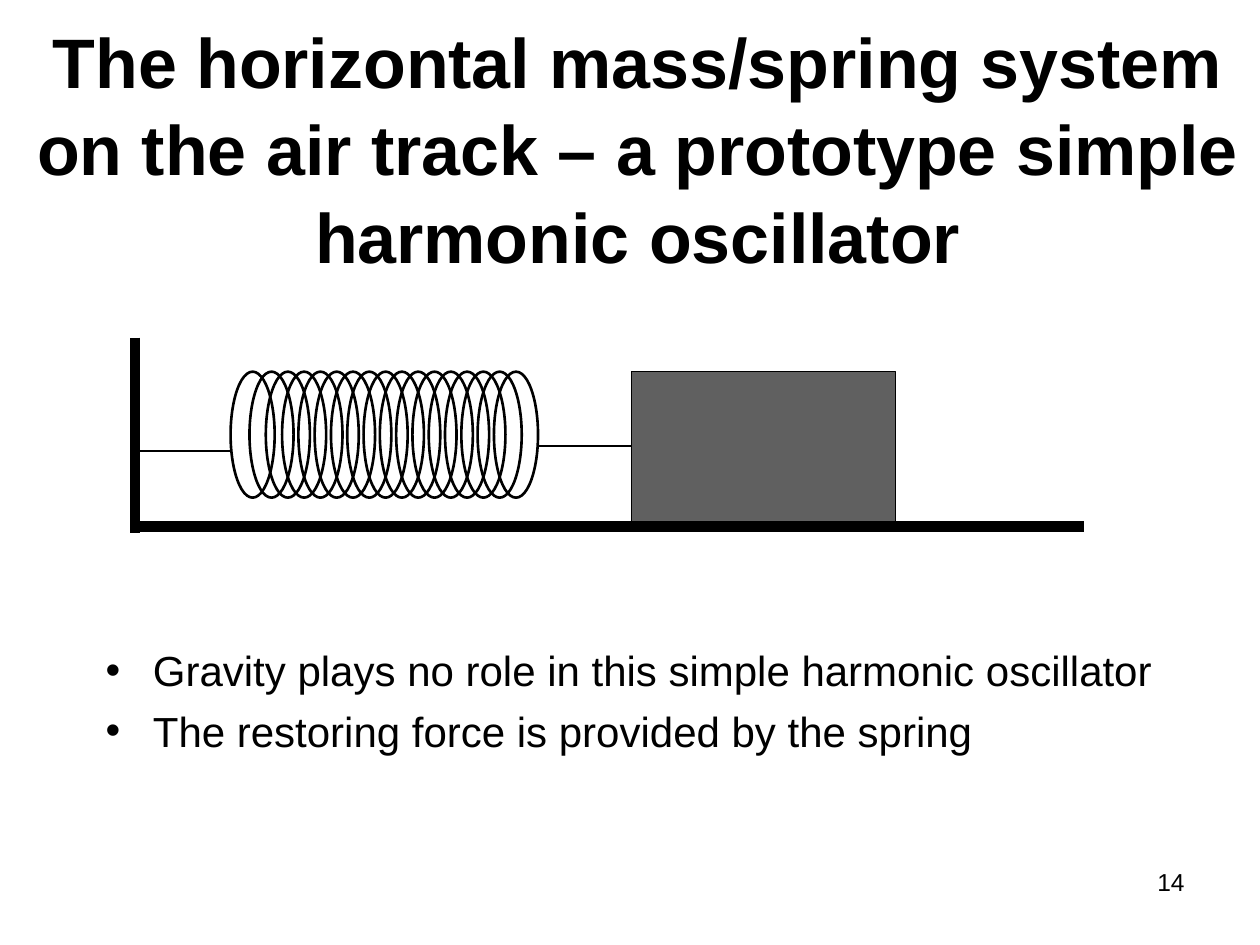
"""Builds a slide on a mass and spring on an air track, on a grid of 100 columns by 75 rows."""
from dataclasses import dataclass

from lxml.etree import SubElement
from pptx import Presentation
from pptx.dml.color import RGBColor
from pptx.enum.shapes import MSO_CONNECTOR as Link, MSO_SHAPE as Kind
from pptx.enum.text import MSO_ANCHOR as Anchor, MSO_AUTO_SIZE as Fit, PP_ALIGN as Align
from pptx.oxml.ns import qn
from pptx.util import Emu, Inches, Pt

COLS, ROWS = 100, 75
WIDE, HIGH = Inches(10), Inches(7.5)
BLACK, GREY = "000000", "606060"
TITLE = "The horizontal mass/spring system on the air track – a prototype simple harmonic oscillator"
NOTES = (
    "Gravity plays no role in this simple harmonic oscillator",
    "The restoring force is provided by the spring",
)


@dataclass(frozen=True)
class Box:
    col: float
    row: float
    cols: float
    rows: float

    def place(self) -> tuple[Emu, Emu, Emu, Emu]:
        return across(self.col), down(self.row), across(self.cols), down(self.rows)


@dataclass(frozen=True)
class Rod:
    start: tuple[float, float]
    end: tuple[float, float]
    weight: float


def across(cols: float) -> Emu:
    return Emu(round(WIDE * cols / COLS))


def down(rows: float) -> Emu:
    return Emu(round(HIGH * rows / ROWS))


def paint(color, code: str) -> None:
    color.rgb = RGBColor.from_string(code)


def style(para, size: float, bold: bool = False, align: Align = Align.LEFT) -> None:
    para.alignment = align
    font = para.font
    font.name, font.size, font.bold = "Arial", Pt(size), bold
    paint(font.color, BLACK)


def bullet(para) -> None:
    props = para._p.get_or_add_pPr()
    props.set("marL", str(across(3.75)))
    props.set("indent", str(-across(3.75)))
    SubElement(props, qn("a:buFont"), typeface="Arial")
    SubElement(props, qn("a:buChar"), char="•")


def write(slide, box: Box, lines: tuple[str, ...]):
    frame = slide.shapes.add_textbox(*box.place()).text_frame
    frame.word_wrap = True
    frame.text = "\n".join(lines)
    return frame.paragraphs


def draw(group, kind: Kind, box: Box, weight: float, fill: str = "") -> None:
    shape = group.shapes.add_shape(kind, *box.place())
    shape.shadow.inherit = False
    if fill:
        shape.fill.solid()
        paint(shape.fill.fore_color, fill)
    else:
        shape.fill.background()
    shape.line.width = Pt(weight)
    paint(shape.line.color, BLACK)


def join(group, rod: Rod) -> None:
    (left, top), (right, low) = rod.start, rod.end
    line = group.shapes.add_connector(
        Link.STRAIGHT, across(left), down(top), across(right), down(low))
    line.line.width = Pt(rod.weight)
    paint(line.line.color, BLACK)
    SubElement(line._element.spPr, qn("a:effectLst"))


def head(slide) -> None:
    title = slide.shapes.title
    title.left, title.top, title.width, title.height = Box(1.2, 2.8, 98.8, 17.6).place()
    frame = title.text_frame
    frame.text = TITLE
    frame.word_wrap, frame.auto_size = True, Fit.NONE
    frame.vertical_anchor = Anchor.MIDDLE
    para = frame.paragraphs[0]
    style(para, 40, True, Align.CENTER)
    para.line_spacing = 1.04


def spring(slide) -> None:
    group = slide.shapes.add_group_shape()
    first, last, turns = 19.8, 39.2, 16
    step = (last - first) / (turns - 1)
    for col in [18.3] + [first + step * turn for turn in range(turns)]:
        draw(group, Kind.OVAL, Box(col, 29.5, 3.5, 10), 1.5)
    for rod in (Rod((18.3, 35.8), (10.7, 35.8), 1.5), Rod((42.8, 35.4), (50.1, 35.4), 1.5)):
        join(group, rod)
    draw(group, Kind.RECTANGLE, Box(50.1, 29.5, 21, 11.9), 0.75, GREY)
    for rod in (Rod((10.7, 41.8), (86, 41.8), 6), Rod((10.7, 26.8), (10.7, 42.3), 6)):
        join(group, rod)


def main() -> None:
    deck = Presentation()
    deck.slide_width, deck.slide_height = WIDE, HIGH
    slide = deck.slides.add_slide(deck.slide_layouts[5])
    head(slide)
    for para in write(slide, Box(7.4, 50.7, 85.3, 10), NOTES):
        style(para, 24)
        para.space_before = Pt(5.5)
        bullet(para)
    for para in write(slide, Box(71.7, 68.3, 23.3, 5.2), ("14",)):
        style(para, 14, align=Align.RIGHT)
    spring(slide)
    deck.save("out.pptx")


if __name__ == "__main__":
    main()
